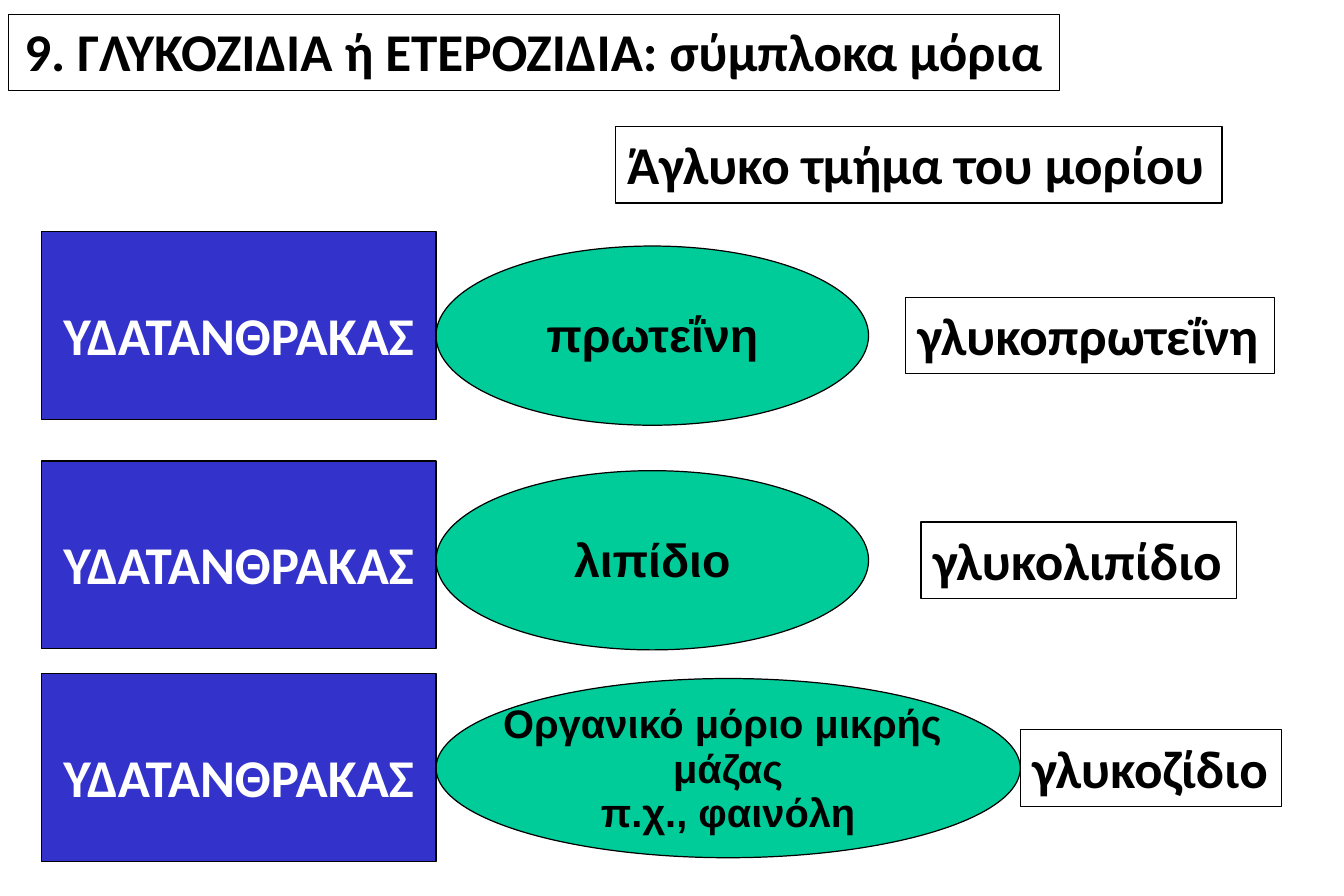
from dataclasses import dataclass

from pptx import Presentation
from pptx.dml.color import RGBColor
from pptx.enum.shapes import MSO_SHAPE
from pptx.enum.text import MSO_ANCHOR, MSO_AUTO_SIZE, PP_ALIGN
from pptx.util import Pt

RECT, OVAL = MSO_SHAPE.RECTANGLE, MSO_SHAPE.OVAL
TOP, MIDDLE = MSO_ANCHOR.TOP, MSO_ANCHOR.MIDDLE
LEFT, CENTER = PP_ALIGN.LEFT, PP_ALIGN.CENTER
FIXED = MSO_AUTO_SIZE.NONE
TITLE_ONLY = 5
SCALE = 9144  # EMU per px, 100 px to the inch


@dataclass(frozen=True)
class Theme:
    ink: RGBColor = RGBColor(0, 0, 0)
    paper: RGBColor = RGBColor(255, 255, 255)
    blue: RGBColor = RGBColor(0x33, 0x33, 0xCC)
    green: RGBColor = RGBColor(0, 0xCC, 0x99)
    head: str = "Calibri"
    body: str = "Arial"
    large: int = 32
    medium: int = 28
    small: int = 24
    rule: float = 0.75


THEME = Theme()


def px(count):
    return round(count * SCALE)


def place(shape, box):
    shape.left, shape.top, shape.width, shape.height = map(px, box)


def outline(shape, fill=None):
    if fill is None:
        shape.fill.background()
    else:
        shape.fill.solid()
        shape.fill.fore_color.rgb = fill
    shape.line.color.rgb = THEME.ink
    shape.line.width = Pt(THEME.rule)


def write(shape, lines, size, font=THEME.head, color=THEME.ink,
          align=CENTER, anchor=TOP, inset=9, wrap=False, pitch=0.93):
    frame = shape.text_frame
    frame.auto_size = FIXED
    frame.word_wrap = wrap
    frame.vertical_anchor = anchor
    frame.margin_left = frame.margin_right = px(10)
    frame.margin_top, frame.margin_bottom = px(inset), px(5)
    for i, line in enumerate(lines):
        para = frame.paragraphs[0] if i == 0 else frame.add_paragraph()
        para.alignment = align
        para.line_spacing = pitch
        run = para.add_run()
        run.text = line
        run.font.name = font
        run.font.size = Pt(size)
        run.font.bold = True
        run.font.color.rgb = color


def add(slide, kind, box, fill=None):
    shape = slide.shapes.add_shape(kind, *map(px, box))
    shape.shadow.inherit = False
    outline(shape, fill)
    return shape


def title(slide, box, text):
    shape = slide.shapes.title
    place(shape, box)
    outline(shape)
    write(shape, [text], THEME.large, inset=7, pitch=0.95)


def label(slide, box, text):
    write(add(slide, RECT, box), [text], THEME.large, align=LEFT)


def sugar(slide, box):
    write(add(slide, RECT, box, THEME.blue), ["ΥΔΑΤΑΝΘΡΑΚΑΣ"], THEME.large,
          color=THEME.paper, inset=59, wrap=True, pitch=1)


def row(slide, box, drop, width, lines, size, gap, span, name):
    """Draw a sugar block, the oval joined to it and the resulting compound."""
    left, top, side, height = box
    start, tall, high = left + side, 150, 64
    oval = add(slide, OVAL, (start, top + drop, width, tall), THEME.green)
    write(oval, lines, size, THEME.body, anchor=MIDDLE, inset=8)
    sugar(slide, (left, top, side, height))
    middle = top + drop + (tall - high) / 2
    label(slide, (start + width + gap, middle, span, high), name)


def main():
    deck = Presentation()
    deck.slide_width, deck.slide_height = px(1125), px(750)
    slide = deck.slides.add_slide(deck.slide_layouts[TITLE_ONLY])
    title(slide, (7, 12, 880, 64),
          "9. ΓΛΥΚΟΖΙΔΙΑ ή ΕΤΕΡΟΖΙΔΙΑ: σύμπλοκα μόρια")
    label(slide, (515, 106, 508, 64), "Άγλυκο τμήμα του μορίου")
    small = ["Οργανικό μόριο μικρής ", "μάζας", "π.χ., φαινόλη"]
    rows = [
        (194, 12, 362, ["πρωτεΐνη"], THEME.medium, 31, 309, "γλυκοπρωτεΐνη"),
        (386, 8, 362, ["λιπίδιο"], THEME.medium, 44, 264, "γλυκολιπίδιο"),
        (564, 4, 489, small, THEME.small, 0, 219, "γλυκοζίδιο"),
    ]
    for top, *parts in rows:
        row(slide, (35, top, 330, 157), *parts)
    deck.save("out.pptx")


if __name__ == "__main__":
    main()
